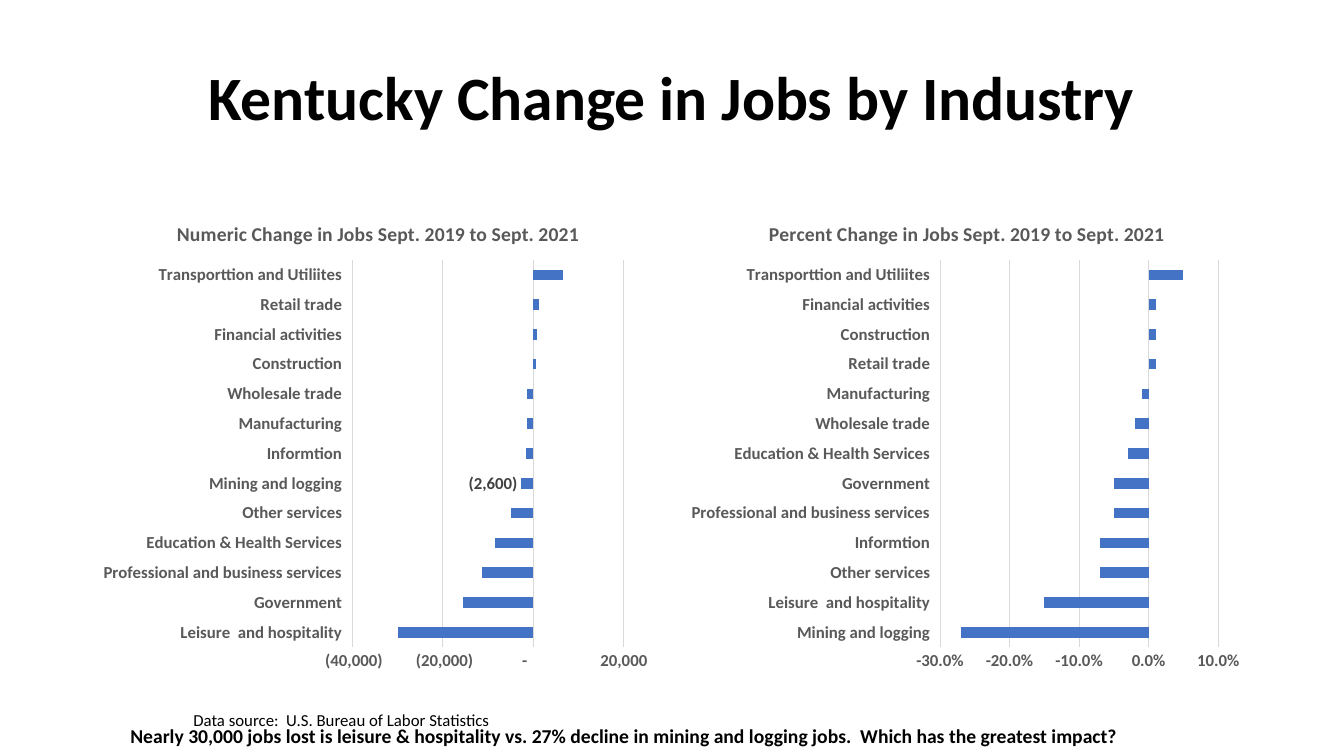
from dataclasses import dataclass

from lxml.etree import SubElement
from pptx import Presentation
from pptx.chart.data import CategoryChartData
from pptx.dml.color import RGBColor
from pptx.enum.chart import XL_CHART_TYPE, XL_LABEL_POSITION, XL_TICK_LABEL_POSITION, XL_TICK_MARK
from pptx.enum.text import MSO_ANCHOR, PP_ALIGN
from pptx.oxml.ns import qn
from pptx.util import Inches, Pt


@dataclass(frozen=True)
class Theme:
    font: str = "Calibri"
    ink: str = "000000"
    gray: str = "595959"
    label: str = "404040"
    rule: str = "D9D9D9"
    bar: str = "4472C4"
    title: int = 44
    head: int = 14
    body: int = 12


THEME = Theme()
WIDE, HIGH = Inches(13.33), Inches(7.5)
COUNT = '_(* #,##0_);_(* \\(#,##0\\);_(* "-"??_);_('

LEISURE = "Leisure  and hospitality"
GOV = "Government"
PROF = "Professional and business services"
EDU = "Education & Health Services"
OTHER = "Other services"
MINING = "Mining and logging"
INFO = "Informtion"
MAKING = "Manufacturing"
WHOLE = "Wholesale trade"
BUILD = "Construction"
FINANCE = "Financial activities"
RETAIL = "Retail trade"
TRANSIT = "Transporttion and Utiliites"

JOBS = {
    LEISURE: -29900, GOV: -15600, PROF: -11200, EDU: -8400, OTHER: -4900,
    MINING: -2600, INFO: -1500, MAKING: -1400, WHOLE: -1400, BUILD: 700,
    FINANCE: 900, RETAIL: 1200, TRANSIT: 6500,
}
SHARES = {
    MINING: -0.27, LEISURE: -0.15, OTHER: -0.07, INFO: -0.07, PROF: -0.05,
    GOV: -0.05, EDU: -0.03, WHOLE: -0.02, MAKING: -0.01, RETAIL: 0.01,
    BUILD: 0.01, FINANCE: 0.01, TRANSIT: 0.05,
}


def place(x, y, w, h):
    """Turn shares of the slide into lengths."""
    return int(x * WIDE), int(y * HIGH), int(w * WIDE), int(h * HIGH)


def style(font, size, color, bold=False):
    font.name, font.size, font.bold = THEME.font, Pt(size), bold
    font.color.rgb = RGBColor.from_string(color)


def add_text(slide, box, text, size, bold=False, align=PP_ALIGN.LEFT,
             anchor=MSO_ANCHOR.TOP, space=1.0):
    frame = slide.shapes.add_textbox(*place(*box)).text_frame
    frame.word_wrap = True
    frame.vertical_anchor = anchor
    para = frame.paragraphs[0]
    para.alignment, para.line_spacing = align, space
    run = para.add_run()
    run.text = text
    style(run.font, size, THEME.ink, bold)


def set_layout(node, **shares):
    """Fix a chart part at shares of its chart; a width marks the inner plot."""
    layout = node.find(qn("c:layout"))
    if layout is None:
        layout = SubElement(node, qn("c:layout"))
        node.remove(layout)
        node.insert(1 if node.tag == qn("c:title") else 0, layout)
    manual = SubElement(layout, qn("c:manualLayout"))
    if "w" in shares:
        SubElement(manual, qn("c:layoutTarget")).set("val", "inner")
    for key in ("x", "y"):
        SubElement(manual, qn(f"c:{key}Mode")).set("val", "edge")
    for key, share in shares.items():
        SubElement(manual, qn(f"c:{key}")).set("val", str(share))


def set_axes(chart, low, high, step, form):
    cat, val = chart.category_axis, chart.value_axis
    for axis in (cat, val):
        axis.major_tick_mark = axis.minor_tick_mark = XL_TICK_MARK.NONE
        style(axis.tick_labels.font, THEME.body, THEME.gray, True)
    cat.tick_label_position = XL_TICK_LABEL_POSITION.LOW
    cat.has_major_gridlines = False
    val.has_major_gridlines = True
    val.minimum_scale, val.maximum_scale, val.major_unit = low, high, step
    val.tick_labels.number_format = form
    val.tick_labels.number_format_is_linked = False
    val.format.line.fill.background()
    for line in (cat.format.line, val.major_gridlines.format.line):
        line.color.rgb = RGBColor.from_string(THEME.rule)
        line.width = Pt(0.75)


def add_bars(slide, box, title, values, form, scale, start, span):
    """Draw a bar chart; start is the title's left share, span the plot's width share."""
    data = CategoryChartData(number_format=form)
    data.categories = list(values)
    data.add_series("Series 1", list(values.values()))
    chart = slide.shapes.add_chart(
        XL_CHART_TYPE.BAR_CLUSTERED, *place(*box), data).chart
    style(chart.font, 10, THEME.ink)
    chart.has_legend = False
    chart.has_title = True
    run = chart.chart_title.text_frame.paragraphs[0].add_run()
    run.text = title
    style(run.font, THEME.head, THEME.gray, True)
    chart.chart_title.include_in_layout = False
    area = chart.plots[0]
    area.gap_width, area.vary_by_categories = 182, False
    bars = area.series[0]
    bars.invert_if_negative = False
    bars.format.fill.solid()
    bars.format.fill.fore_color.rgb = RGBColor.from_string(THEME.bar)
    set_axes(chart, *scale, form)
    root = chart.element.find(qn("c:chart"))
    set_layout(root.find(qn("c:title")), x=start, y=0.03)
    set_layout(root.find(qn("c:plotArea")), x=0.454, y=0.121, w=span, h=0.807)
    return chart


def label_bar(chart, index):
    label = chart.plots[0].series[0].points[index].data_label
    style(label.font, THEME.body, THEME.label, True)
    label.position = XL_LABEL_POSITION.OUTSIDE_END


def main():
    deck = Presentation()
    deck.slide_width, deck.slide_height = WIDE, HIGH
    slide = deck.slides.add_slide(deck.slide_layouts[6])
    left, top, width, height = 0.069, 0.267, 0.425, 0.635
    right = left + width + 0.0125
    add_text(slide, (left, 0.037, 0.862, 0.193),
             "Kentucky Change in Jobs by Industry", THEME.title, True,
             PP_ALIGN.CENTER, MSO_ANCHOR.MIDDLE, 0.9)
    jobs = add_bars(slide, (left, top, width, height),
                    "Numeric Change in Jobs Sept. 2019 to Sept. 2021",
                    JOBS, COUNT, (-40000, 20000, 20000), 0.141, 0.476)
    label_bar(jobs, list(JOBS).index(MINING))
    add_bars(slide, (right, top, width, height),
             "Percent Change in Jobs Sept. 2019 to Sept. 2021",
             SHARES, "0.0%", (-0.3, 0.1, 0.1), 0.148, 0.487)
    add_text(slide, (0.0125, 0.951, 0.904, 0.045),
             "Nearly 30,000 jobs lost is leisure & hospitality vs. 27% decline "
             "in mining and logging jobs.  Which has the greatest impact?",
             THEME.head, True, PP_ALIGN.CENTER)
    add_text(slide, (0.1365, 0.932, 0.556, 0.04),
             "Data source:  U.S. Bureau of Labor Statistics", THEME.body)
    deck.save("out.pptx")


if __name__ == "__main__":
    main()
